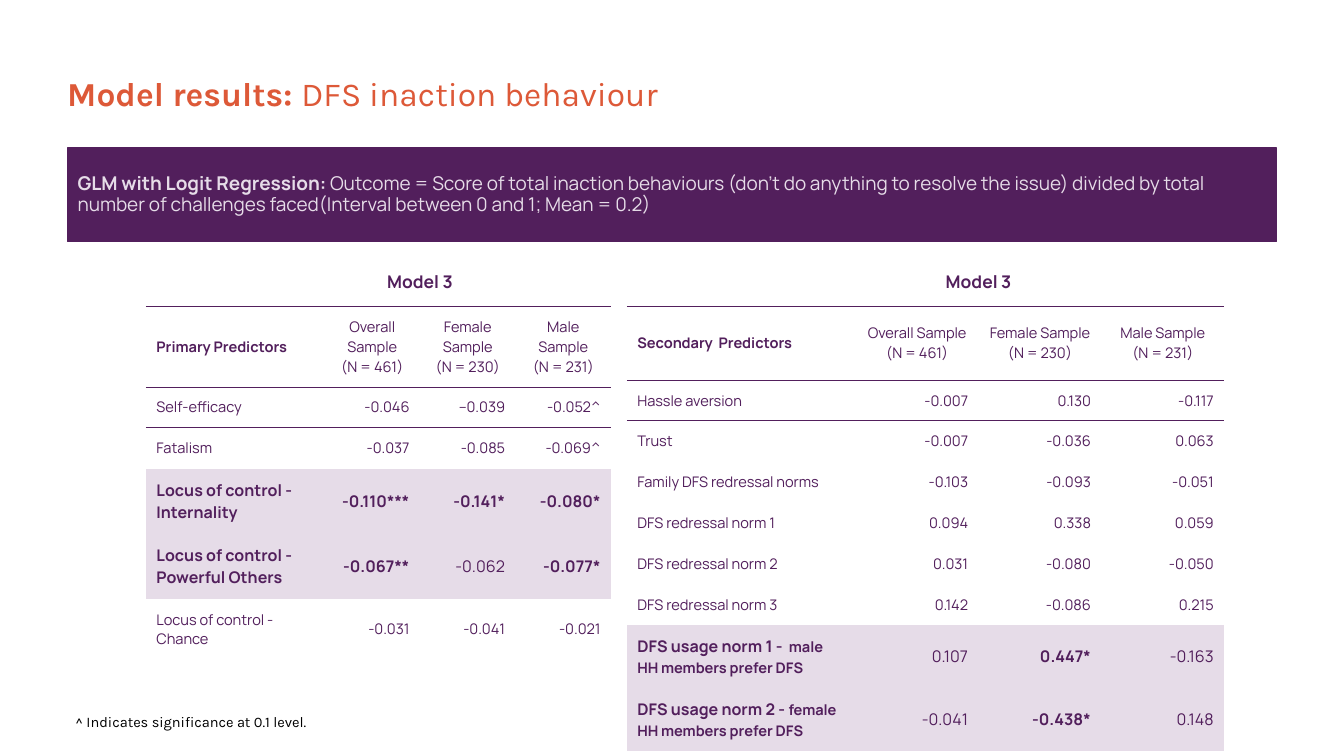
from dataclasses import dataclass

from lxml import etree
from pptx import Presentation
from pptx.dml.color import RGBColor
from pptx.enum.shapes import MSO_SHAPE
from pptx.enum.text import MSO_ANCHOR, MSO_AUTO_SIZE, PP_ALIGN
from pptx.oxml.ns import qn
from pptx.util import Pt

EMU_PER_PX = 9144
TITLE_ONLY = 5
RECTANGLE = MSO_SHAPE.RECTANGLE
MIDDLE, TOP = MSO_ANCHOR.MIDDLE, MSO_ANCHOR.TOP
LEFT, CENTER, RIGHT = PP_ALIGN.LEFT, PP_ALIGN.CENTER, PP_ALIGN.RIGHT
NO_AUTOSIZE = MSO_AUTO_SIZE.NONE
PLAIN_TABLE_STYLE = "{2D5ABB26-0587-4C30-8999-92F81FD0307C}"
RULED_EDGES = {0: ["a:lnB"], 1: ["a:lnT", "a:lnB"], 2: ["a:lnT"]}


@dataclass(frozen=True)
class Theme:
    purple: str = "521F5C"
    lilac: str = "E6DCE8"
    orange: str = "DD5938"
    black: str = "000000"
    heading_font: str = "Karla"
    body_font: str = "Manrope"
    title_size: int = 23
    banner_size: int = 13
    model_size: int = 12
    strong_size: int = 11
    small_size: int = 10
    rule_width: float = 0.75


THEME = Theme()
TITLE_STYLE = {"name": THEME.heading_font, "size": THEME.title_size, "color": THEME.orange}
BANNER_STYLE = {"name": THEME.body_font, "size": THEME.banner_size, "color": THEME.lilac}
NOTE_STYLE = {"name": THEME.heading_font, "size": THEME.small_size, "color": THEME.black}
TABLE_STYLE = {"name": THEME.body_font, "size": THEME.small_size, "color": THEME.purple}
STRONG_STYLE = TABLE_STYLE | {"size": THEME.strong_size}

SAMPLES = [
    ["Overall Sample", "(N = 461)"],
    ["Female Sample", "(N = 230)"],
    ["Male Sample", "(N = 231)"],
]
PRIMARY_ROWS = [
    ("Self-efficacy", "", ["-0.046", "--0.039", "-0.052^"], False),
    ("Fatalism", "", ["-0.037", "-0.085", "-0.069^"], False),
    ("Locus of control - Internality", "", ["-0.110***", "-0.141*", "-0.080*"], True),
    ("Locus of control - Powerful Others", "", ["-0.067**", "-0.062", "-0.077*"], True),
    ("Locus of control - Chance", "", ["-0.031", "-0.041", "-0.021"], False),
]
SECONDARY_ROWS = [
    ("Hassle aversion", "", ["-0.007", "0.130", "-0.117"], False),
    ("Trust", "", ["-0.007", "-0.036", "0.063"], False),
    ("Family DFS redressal norms", "", ["-0.103", "-0.093", "-0.051"], False),
    ("DFS redressal norm 1", "", ["0.094", "0.338", "0.059"], False),
    ("DFS redressal norm 2", "", ["0.031", "-0.080", "-0.050"], False),
    ("DFS redressal norm 3", "", ["0.142", "-0.086", "0.215"], False),
    ("DFS usage norm 1 - ", " male HH members prefer DFS", ["0.107", "0.447*", "-0.163"], True),
    ("DFS usage norm 2 - ", "female HH members prefer DFS", ["-0.041", "-0.438*", "0.148"], True),
]


def px(length):
    return length * EMU_PER_PX


def place(left, top, width, height):
    return [px(length) for length in (left, top, width, height)]


def format_font(font, style):
    font.color.rgb = RGBColor.from_string(style["color"])
    values = {"name": style["name"], "size": Pt(style["size"]), "bold": style.get("bold", False)}
    for name, value in values.items():
        setattr(font, name, value)


def write(frame, lines, align=LEFT, spacing=None):
    for index, spans in enumerate(lines):
        para = frame.add_paragraph() if index else frame.paragraphs[0]
        para.alignment = align
        para.line_spacing = spacing
        for text, style in spans:
            span = para.add_run()
            span.text = text
            format_font(span.font, style)


def set_frame(frame, anchor, inset):
    values = {"word_wrap": True, "auto_size": NO_AUTOSIZE, "vertical_anchor": anchor}
    values |= {f"margin_{side}": px(inset) for side in ("left", "top", "right", "bottom")}
    for name, value in values.items():
        setattr(frame, name, value)


def add_title(page, strong, plain):
    title = page.shapes.title
    title.left, title.top, title.width, title.height = place(64, 29, 1152, 120)
    set_frame(title.text_frame, MIDDLE, 0)
    write(title.text_frame, [[(strong, TITLE_STYLE | {"bold": True}), (plain, TITLE_STYLE)]])


def add_banner(page, strong, plain):
    banner = page.shapes.add_shape(RECTANGLE, *place(64, 141, 1152, 89))
    banner.shadow.inherit = False
    banner.fill.solid()
    for paint in (banner.fill.fore_color, banner.line.color):
        paint.rgb = RGBColor.from_string(THEME.purple)
    banner.line.width = Pt(THEME.rule_width)
    set_frame(banner.text_frame, MIDDLE, 10)
    spans = [(strong, BANNER_STYLE | {"bold": True}), (plain, BANNER_STYLE)]
    write(banner.text_frame, [spans], spacing=0.9)


def add_note(page, text):
    note = page.shapes.add_textbox(*place(62, 669, 672, 37))
    set_frame(note.text_frame, TOP, 10)
    write(note.text_frame, [[(text, NOTE_STYLE)]])


def add_rule(cell, edge):
    width = str(Pt(THEME.rule_width))
    line = etree.SubElement(cell._tc.get_or_add_tcPr(), qn(edge), w=width)
    fill = etree.SubElement(line, qn("a:solidFill"))
    etree.SubElement(fill, qn("a:srgbClr"), val=THEME.purple)


def format_cell(cell, row, shaded):
    cell.vertical_anchor = MIDDLE
    for side in ("left", "top", "right", "bottom"):
        setattr(cell, f"margin_{side}", px(10))
    for edge in RULED_EDGES.get(row, []):
        add_rule(cell, edge)
    if shaded:
        cell.fill.solid()
        cell.fill.fore_color.rgb = RGBColor.from_string(THEME.lilac)
    else:
        cell.fill.background()
    format_font(cell.text_frame.paragraphs[0].font, TABLE_STYLE)


def write_result(table, row, label, detail, values, shaded):
    style = STRONG_STYLE if shaded else TABLE_STYLE
    spans = [(label, style | {"bold": shaded})]
    if detail:
        spans.append((detail, TABLE_STYLE | {"bold": True}))
    write(table.cell(row, 0).text_frame, [spans])
    for column, value in enumerate(values, 1):
        span = (value, style | {"bold": "*" in value})
        write(table.cell(row, column).text_frame, [[span]], RIGHT)


def add_results(page, left, heading, results, columns, header_height):
    heights = [47, header_height] + [35] * len(results)
    area = place(left, 245, sum(columns), sum(heights))
    table = page.shapes.add_table(len(heights), len(columns), *area).table
    table.first_row = table.horz_banding = False
    table._tbl.tblPr.find(qn("a:tableStyleId")).text = PLAIN_TABLE_STYLE
    for column, width in zip(table.columns, columns):
        column.width = px(width)
    shades = [False, False] + [result[-1] for result in results]
    for row, (height, shaded) in enumerate(zip(heights, shades)):
        table.rows[row].height = px(height)
        for column in range(len(columns)):
            format_cell(table.cell(row, column), row, shaded)
    table.cell(0, 1).merge(table.cell(0, 2))
    model_style = TABLE_STYLE | {"size": THEME.model_size, "bold": True}
    write(table.cell(0, 1).text_frame, [[("Model 3", model_style)]], CENTER)
    write(table.cell(1, 0).text_frame, [[(heading, TABLE_STYLE | {"bold": True})]])
    for column, sample in enumerate(SAMPLES, 1):
        lines = [[(text, TABLE_STYLE)] for text in sample]
        write(table.cell(1, column).text_frame, lines, CENTER)
    for row, result in enumerate(results, 2):
        write_result(table, row, *result)


def main():
    deck = Presentation()
    deck.slide_width, deck.slide_height = px(1280), px(720)
    page = deck.slides.add_slide(deck.slide_layouts[TITLE_ONLY])
    add_title(page, "Model results: ", "DFS inaction behaviour")
    add_banner(
        page,
        "GLM with Logit Regression:",
        " Outcome = Score of total inaction behaviours (don’t do anything to resolve the issue) "
        "divided by total number of challenges faced(Interval between 0 and 1; Mean = 0.2)",
    )
    add_results(page, 139, "Primary Predictors", PRIMARY_ROWS, [170, 91, 91, 91], 35)
    add_results(page, 597, "Secondary  Predictors", SECONDARY_ROWS, [218, 117, 117, 117], 70)
    add_note(page, "^ Indicates significance at 0.1 level.")
    deck.save("out.pptx")


if __name__ == "__main__":
    main()
